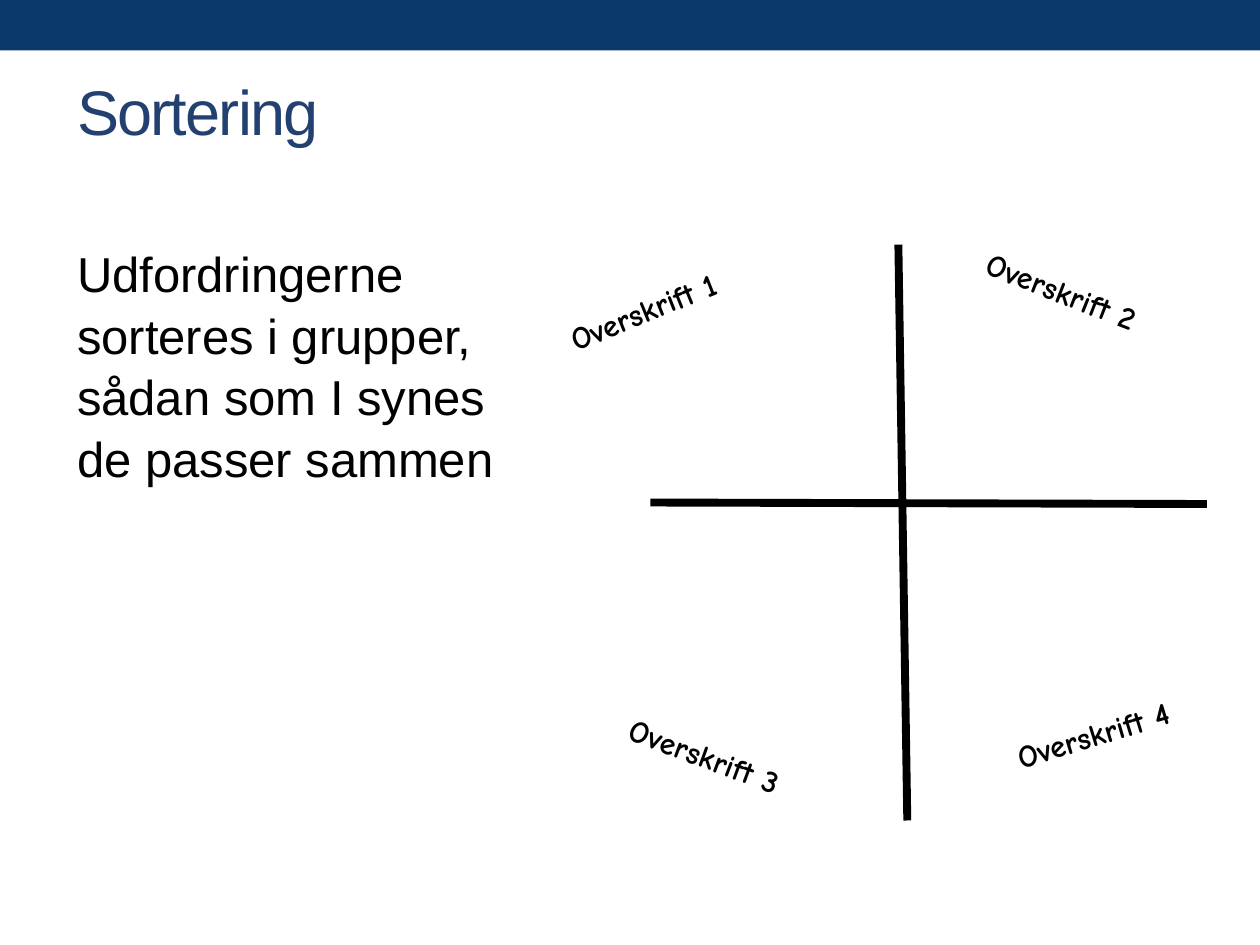
"""Build the "Sortering" slide: instructions beside a four-field sorting cross."""
from lxml.etree import SubElement
from pptx import Presentation
from pptx.dml.color import RGBColor
from pptx.enum.shapes import MSO_CONNECTOR, MSO_SHAPE
from pptx.enum.text import MSO_ANCHOR, MSO_AUTO_SIZE, PP_ALIGN
from pptx.oxml.ns import qn
from pptx.util import Cm, Pt

NAVY = RGBColor(0x0B, 0x39, 0x6C)
BLUE = RGBColor(0x23, 0x41, 0x70)
BLACK = RGBColor(0, 0, 0)
WHITE = RGBColor(0xFF, 0xFF, 0xFF)

TITLE = "Sortering"
BODY = "Udfordringerne sorteres i grupper, sådan som I synes de passer sammen"
AXES = [(18.11, 4.93, 18.29, 16.54), (13.11, 10.13, 24.33, 10.16)]
LABELS = [
    ("Overskrift 1", 11.1, 5.46, 337.8),
    ("Overskrift 2", 19.51, 5.64, 21.4),
    ("Overskrift 3", 12.32, 14.99, 20.3),
    ("Overskrift 4", 20.17, 14.07, 342.9),
]
LABEL_SIZE = (5.21, 1.02)


def write(sp, text, font, size, color, bold=False):
    tf = sp.text_frame
    tf.word_wrap = True
    tf.auto_size = MSO_AUTO_SIZE.NONE
    tf.vertical_anchor = MSO_ANCHOR.TOP
    p = tf.paragraphs[0]
    p.text = text
    p.alignment = PP_ALIGN.LEFT
    p.font.name, p.font.size, p.font.bold = font, Pt(size), bold
    p.font.color.rgb = color
    return p


def place(sp, left, top, width, height):
    sp.left, sp.top, sp.width, sp.height = map(Cm, (left, top, width, height))
    sp.fill.solid()
    sp.fill.fore_color.rgb = WHITE


def main():
    prs = Presentation()
    prs.slide_width, prs.slide_height = Cm(25.4), Cm(19.05)
    s = prs.slides.add_slide(prs.slide_layouts[1])
    title, body = s.placeholders

    band = s.shapes.add_shape(MSO_SHAPE.RECTANGLE, 0, 0, prs.slide_width, Cm(1.02))
    band.shadow.inherit = False
    band.fill.solid()
    band.fill.fore_color.rgb = NAVY
    band.line.fill.background()

    place(title, 1.3, 1.47, 22.86, 2.74)
    p = write(title, TITLE, "Arial", 36, BLUE)
    title.text_frame.margin_top = 0
    p.runs[0].font._element.set("spc", "-100")

    place(body, 1.3, 4.72, 8.99, 5.05)
    p = write(body, BODY, "Arial", 28, BLACK)
    p.space_before = Pt(0)
    p.line_spacing = 1.05
    pPr = p._p.get_or_add_pPr()
    pPr.set("marL", "0")
    pPr.set("indent", "0")
    pPr.insert_element_before(pPr.makeelement(qn("a:buNone")), "a:tabLst", "a:defRPr")

    for ends in AXES:
        axis = s.shapes.add_connector(MSO_CONNECTOR.STRAIGHT, *map(Cm, ends))
        axis.line.color.rgb = BLACK
        axis.line.width = Pt(4.5)
        SubElement(axis._element.spPr, qn("a:effectLst"))

    for text, left, top, angle in LABELS:
        label = s.shapes.add_textbox(*map(Cm, (left, top, *LABEL_SIZE)))
        label.rotation = angle
        write(label, text, "Comic Neue", 18, BLACK, bold=True)

    prs.save("out.pptx")


if __name__ == "__main__":
    main()
